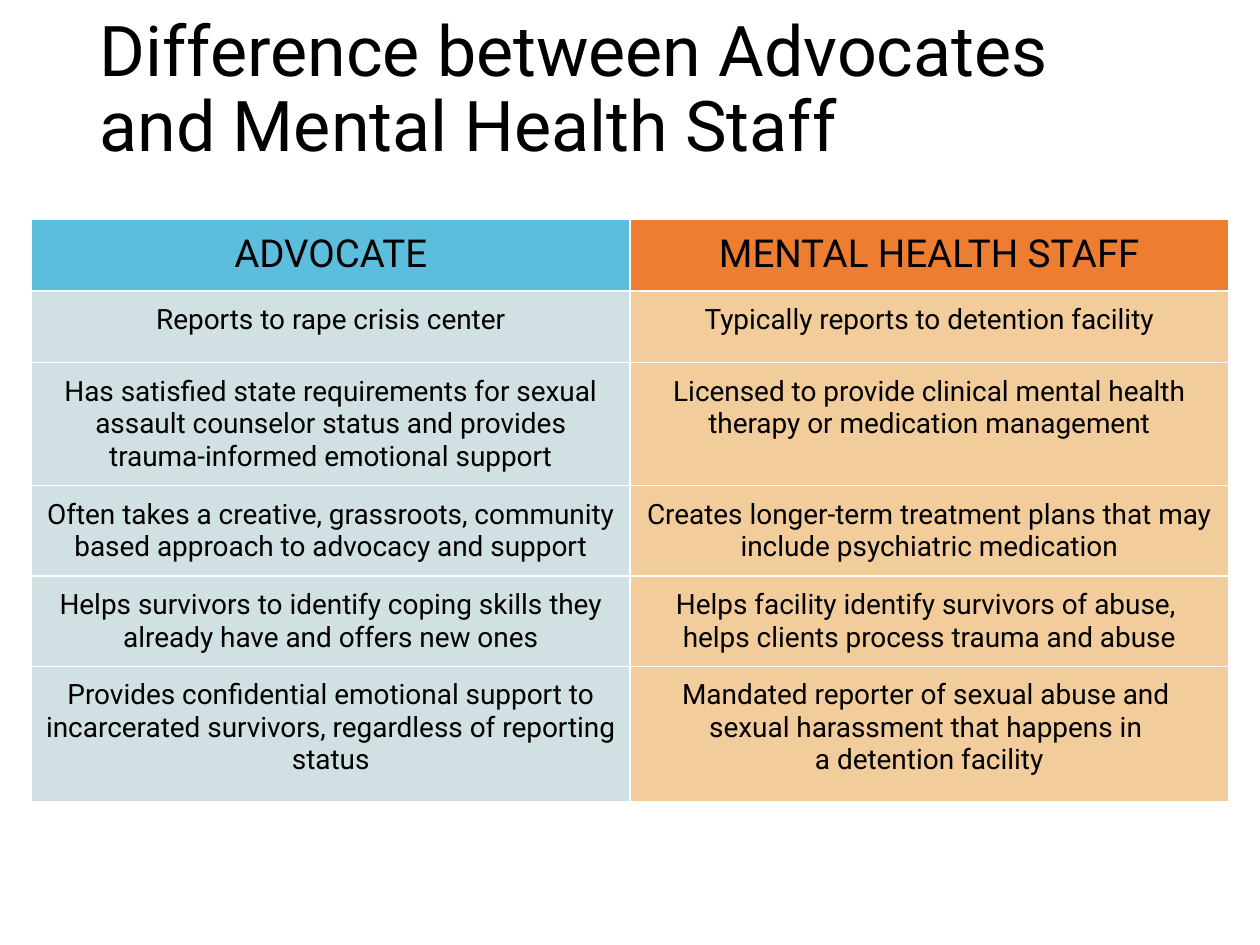
"""Build the slide comparing advocates with mental health staff."""
from lxml import etree
from pptx import Presentation
from pptx import util as u
from pptx.dml.color import RGBColor
from pptx.enum import text
from pptx.oxml import ns

TITLE = "Difference between Advocates and Mental Health Staff"
ROWS = [
    ("ADVOCATE", "MENTAL HEALTH STAFF"),
    ("Reports to rape crisis center", "Typically reports to detention facility"),
    ("Has satisfied state requirements for sexual assault counselor status "
     "and provides trauma-informed emotional support",
     "Licensed to provide clinical mental health therapy or medication management"),
    ("Often takes a creative, grassroots, community based approach to advocacy and support",
     "Creates longer-term treatment plans that may include psychiatric medication"),
    ("Helps survivors to identify coping skills they already have and offers new ones",
     "Helps facility identify survivors of abuse, \nhelps clients process trauma and abuse"),
    ("Provides confidential emotional support to incarcerated survivors, "
     "regardless of reporting status",
     "Mandated reporter of sexual abuse and \nsexual harassment that happens in "
     "\na detention facility"),
]
ROW_HEIGHTS = [0.57] * 5 + [1.07]
COL_WIDTH = 4.75
FONT = "Roboto"
BLACK = RGBColor(0x00, 0x00, 0x00)
WHITE = RGBColor(0xFF, 0xFF, 0xFF)
HEADER_FILLS = (RGBColor(0x5C, 0xBE, 0xDC), RGBColor(0xED, 0x7D, 0x31))
BODY_FILLS = (RGBColor(0xD0, 0xE0, 0xE3), RGBColor(0xF2, 0xCC, 0x9B))


def style_runs(p, size):
    for r in p.runs:
        r.font.name = FONT
        r.font.size = u.Pt(size)
        r.font.bold = False
        r.font.color.rgb = BLACK


def add_borders(cell):
    tc_pr = cell._tc.get_or_add_tcPr()
    for side in ("lnL", "lnR", "lnT", "lnB"):
        ln = etree.SubElement(tc_pr, ns.qn(f"a:{side}"), w=str(u.Pt(0.75)))
        fill = etree.SubElement(ln, ns.qn("a:solidFill"))
        etree.SubElement(fill, ns.qn("a:srgbClr"), val=str(WHITE))


def fill_cell(cell, words, size, color):
    cell.margin_left = cell.margin_right = u.Inches(0.1)
    cell.margin_top = cell.margin_bottom = u.Inches(0.1)
    add_borders(cell)
    cell.fill.solid()
    cell.fill.fore_color.rgb = color
    p = cell.text_frame.paragraphs[0]
    p.text = words
    p.alignment = text.PP_ALIGN.CENTER
    style_runs(p, size)


def add_title(s):
    sp = s.shapes.title
    sp.left, sp.top = u.Inches(0.69), u.Inches(0)
    sp.width, sp.height = u.Inches(8.62), u.Inches(1.45)
    tf = sp.text_frame
    tf.text = TITLE
    tf.word_wrap = True
    tf.auto_size = text.MSO_AUTO_SIZE.NONE
    tf.vertical_anchor = text.MSO_ANCHOR.MIDDLE
    p = tf.paragraphs[0]
    p.alignment = text.PP_ALIGN.LEFT
    p.line_spacing = 0.9
    style_runs(p, 40)


def add_comparison(s):
    table = s.shapes.add_table(
        len(ROWS), 2, u.Inches(0.25), u.Inches(1.74),
        u.Inches(2 * COL_WIDTH), u.Inches(sum(ROW_HEIGHTS))).table
    table.first_row = table.horz_banding = False
    for col in table.columns:
        col.width = u.Inches(COL_WIDTH)
    for i, (row, height) in enumerate(zip(ROWS, ROW_HEIGHTS)):
        table.rows[i].height = u.Inches(height)
        size, fills = (16, BODY_FILLS) if i else (22, HEADER_FILLS)
        for j, words in enumerate(row):
            fill_cell(table.cell(i, j), words, size, fills[j])


def main():
    prs = Presentation()
    prs.slide_width, prs.slide_height = u.Inches(10), u.Inches(7.5)
    s = prs.slides.add_slide(prs.slide_layouts[5])
    add_title(s)
    add_comparison(s)
    prs.save("out.pptx")


if __name__ == "__main__":
    main()
